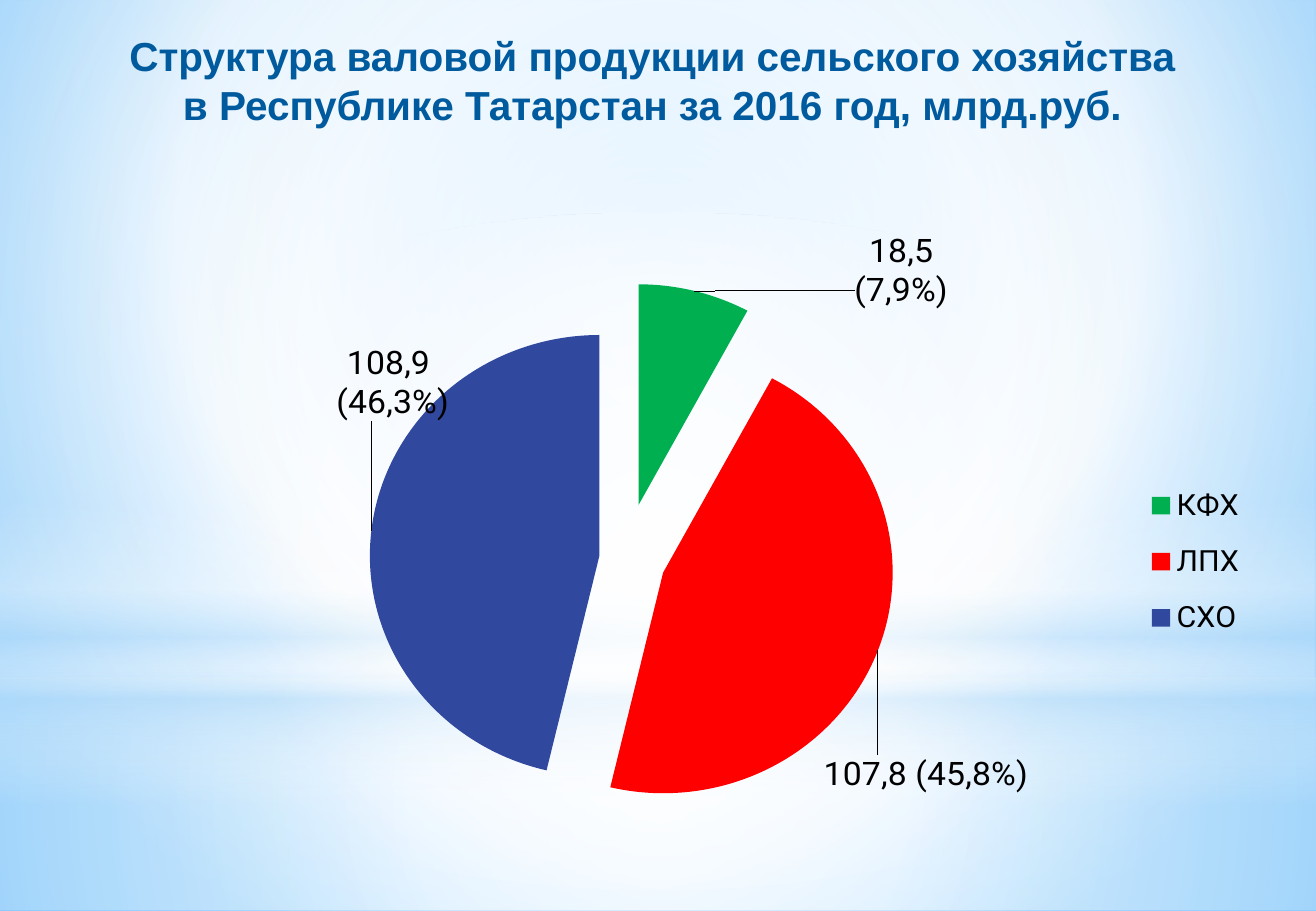
from lxml import etree
from pptx import Presentation
from pptx.chart.data import CategoryChartData
from pptx.dml.color import RGBColor
from pptx.enum.chart import XL_CHART_TYPE, XL_LABEL_POSITION, XL_LEGEND_POSITION
from pptx.enum.shapes import MSO_SHAPE
from pptx.enum.text import MSO_AUTO_SIZE, PP_ALIGN
from pptx.oxml.ns import qn
from pptx.util import Pt

COLORS = {
    "title": "005A9E", "text": "000000", "white": "FFFFFF", "haze": "B4DCFA",
    "sky": "9ED5FF", "edge": "5BB9FF",
    "КФХ": "00B050", "ЛПХ": "FF0000", "СХО": "31489F",
}
SLIDE_W, SLIDE_H = 780, 540
TITLE = ["Структура валовой продукции сельского хозяйства ",
         "в Республике Татарстан за 2016 год, млрд.руб. "]
# category, value, label lines, label shift as share of the chart, explosion
SECTORS = [
    ("КФХ", 18.5, ["18,5", "(7,9%)"], (0.13, 0.01), 25),
    ("ЛПХ", 107.8, ["107,8 (45,8%)"], (-0.05, 0.16), 18),
    ("СХО", 108.9, ["108,9 ", "(46,3%)"], (0.07, -0.17), 11),
]
MAX_EXPLOSION = 25
CENTER = (50, 50, 50, 50)
# gradient stops: position %, colour, opacity %; focus: inset rectangle or None for vertical
BACKDROP = ([(0, "sky", 100), (60, "white", 100), (100, "edge", 100)], (20, 10, 20, 60))
GLOWS = [
    (MSO_SHAPE.RECTANGLE, 402, 138,
     [(0, "white", 91), (37, "white", 76), (100, "haze", 79)], CENTER),
    (MSO_SHAPE.RECTANGLE, 0, 402,
     [(0, "white", 89), (48, "white", 62), (100, "haze", 79)], CENTER),
    (MSO_SHAPE.RECTANGLE, 297, 180,
     [(0, "white", 0), (29, "white", 30), (45, "haze", 40),
      (55, "white", 26), (65, "haze", 60), (100, "white", 0)], None),
    (MSO_SHAPE.OVAL, 126, 402, [(0, "white", 100), (56, "white", 0)], CENTER),
]


def color(name):
    return RGBColor.from_string(COLORS[name])


def add(parent, tag, **attributes):
    return etree.SubElement(parent, qn(tag), {k: str(v) for k, v in attributes.items()})


def set_gradient(fill, owner, stops, focus):
    """Fill with stops of given opacity, circular around focus or vertical."""
    fill.gradient()
    gradient = next(owner.iter(qn("a:gradFill")))
    for child in list(gradient):
        gradient.remove(child)
    stop_list = add(gradient, "a:gsLst")
    for position, name, opacity in stops:
        stop = add(stop_list, "a:gs", pos=position * 1000)
        tint = add(stop, "a:srgbClr", val=COLORS[name])
        add(tint, "a:alpha", val=opacity * 1000)
    if focus:
        circle = add(gradient, "a:path", path="circle")
        add(circle, "a:fillToRect", **{side: inset * 1000 for side, inset in zip("ltrb", focus)})
    else:
        add(gradient, "a:lin", ang=90 * 60000, scaled=0)


def layout_after(sibling, **values):
    """Place a manual chart layout right after the sibling element."""
    layout = etree.Element(qn("c:layout"))
    manual = add(layout, "c:manualLayout")
    for key, value in values.items():
        add(manual, f"c:{key}", val=value)
    sibling.addnext(layout)


def style(font, size, name, tint, bold=False):
    font.size, font.name, font.bold = Pt(size), name, bold
    font.color.rgb = color(tint)


def write_lines(frame, lines, *look):
    for index, line in enumerate(lines):
        paragraph = frame.add_paragraph() if index else frame.paragraphs[0]
        paragraph.alignment = PP_ALIGN.CENTER
        run = paragraph.add_run()
        run.text = line
        style(run.font, *look)


def add_backdrop(slide):
    set_gradient(slide.background.fill, slide.element, *BACKDROP)
    for kind, top, height, stops, focus in GLOWS:
        glow = slide.shapes.add_shape(kind, 0, Pt(top), Pt(SLIDE_W), Pt(height))
        glow.shadow.inherit = False
        glow.line.fill.background()
        set_gradient(glow.fill, glow.element, stops, focus)


def add_pie(slide):
    data = CategoryChartData(number_format="0.0")
    data.categories = [sector[0] for sector in SECTORS]
    data.add_series("Series 1", [sector[1] for sector in SECTORS])
    chart = slide.shapes.add_chart(XL_CHART_TYPE.PIE, Pt(39), Pt(122.4),
                                   Pt(720), Pt(391), data).chart
    chart.has_title = False
    style(chart.font, 18, "Roboto", "text")
    chart.has_legend = True
    legend = chart.legend
    legend.position = XL_LEGEND_POSITION.RIGHT
    legend.include_in_layout = False
    style(legend.font, 18, "Roboto", "text")
    layout_after(legend._element.find(qn("c:legendPos")),
                 xMode="edge", yMode="edge", x=0.88, y=0.37, w=0.1, h=0.3)

    plot_area = chart.plots[0]._element.getparent()
    for old in plot_area.findall(qn("c:layout")):
        plot_area.remove(old)
    anchor = etree.Element(qn("c:extLst"))
    plot_area.insert(0, anchor)
    layout_after(anchor, layoutTarget="inner", xMode="edge", yMode="edge",
                 x=0, y=0.08, w=0.92, h=0.87)
    plot_area.remove(anchor)

    series = chart.plots[0].series[0]
    series.data_labels.show_value = True
    style(series.data_labels.font, 20, "Roboto", "text")
    for index, (name, _, lines, (dx, dy), explosion) in enumerate(SECTORS):
        point = series.points[index]
        point.format.fill.solid()
        point.format.fill.fore_color.rgb = color(name)
        point.format.line.fill.background()
        label = point.data_label
        write_lines(label.text_frame, lines, 20, "Roboto", "text")
        label.position = XL_LABEL_POSITION.OUTSIDE_END

        for slot in series._element.findall(qn("c:dPt")):
            if slot.find(qn("c:idx")).get("val") == str(index):
                burst = add(slot, "c:explosion", val=explosion)
                slot.find(qn("c:spPr")).addprevious(burst)
        for slot in series._element.iter(qn("c:dLbl")):
            if slot.find(qn("c:idx")).get("val") == str(index):
                layout_after(slot.find(qn("c:idx")), x=dx, y=dy)
    burst = add(series._element, "c:explosion", val=MAX_EXPLOSION)
    series._element.find(qn("c:dPt")).addprevious(burst)


def add_title(slide):
    frame = slide.shapes.add_textbox(0, Pt(15), Pt(SLIDE_W), Pt(65)).text_frame
    frame.word_wrap = True
    frame.auto_size = MSO_AUTO_SIZE.SHAPE_TO_FIT_TEXT
    write_lines(frame, TITLE, 24, "Arial", "title", True)


def main():
    deck = Presentation()
    deck.slide_width, deck.slide_height = Pt(SLIDE_W), Pt(SLIDE_H)
    slide = deck.slides.add_slide(deck.slide_layouts[6])
    add_backdrop(slide)
    add_pie(slide)
    add_title(slide)
    deck.save("out.pptx")


if __name__ == "__main__":
    main()
